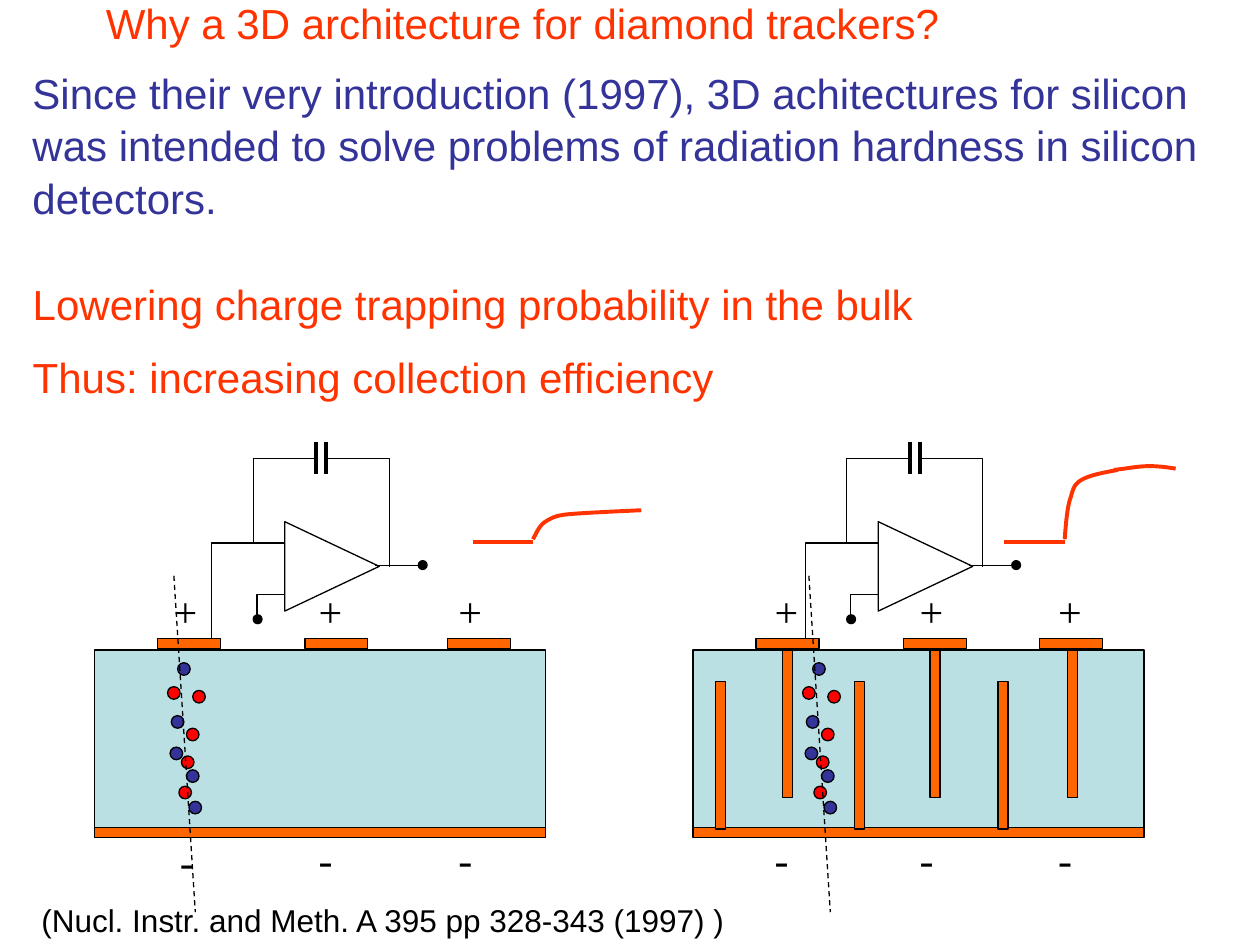
from lxml.etree import SubElement
from pptx import Presentation
from pptx.dml.color import RGBColor
from pptx.enum.dml import MSO_LINE
from pptx.enum.shapes import MSO_CONNECTOR, MSO_SHAPE
from pptx.enum.text import MSO_ANCHOR, MSO_AUTO_SIZE, PP_ALIGN
from pptx.oxml.ns import qn
from pptx.util import Cm, Pt

# Content; places are in inches: left, top, width, height
COLOR = {"red": "FF3300", "navy": "333399", "black": "000000", "white": "FFFFFF",
         "bulk": "BBE0E3", "metal": "FF6600", "hole": "FF0000"}
TITLE = "Why a 3D architecture for diamond trackers?"
INTRO = ("Since their very introduction (1997), 3D achitectures for silicon was intended "
         "to solve problems of radiation hardness in silicon detectors.")
GOALS = ["Lowering charge trapping probability in the bulk",
         "Thus: increasing collection efficiency"]
SOURCE = "(Nucl. Instr. and Meth. A 395 pp 328-343 (1997) )"

# The two sensors: planar on the left, 3D on the right
PLANAR = {"left": 0.75, "pads": [1.25, 2.42, 3.55], "plus": [1.28, 2.43, 3.54],
          "minus": [(1.33, 6.58), (2.43, 6.57), (3.54, 6.57)],
          "upper": [], "lower": [], "track": 0, "amp": 0}
DEEP = {"left": 5.5, "pads": [6, 7.17, 8.25], "plus": [6.05, 7.2, 8.3],
        "minus": [(6.05, 6.57), (7.2, 6.57), (8.3, 6.57)],
        "upper": [6.21, 7.38, 8.47], "lower": [5.68, 6.78, 7.92],
        "track": 5.04, "amp": 4.71}
CHARGES = {
    "hole": [(1.53, 5.48), (1.33, 5.45), (1.48, 5.78), (1.44, 6), (1.42, 6.24)],
    "navy": [(1.36, 5.68), (1.35, 5.93), (1.48, 6.11), (1.5, 6.36), (1.41, 5.26)],
}
WIRES = [
    [(2.26, 4.31), (1.68, 4.31), (1.68, 5.06)],
    [(2.51, 3.64), (2.01, 3.64), (2.01, 4.31)],
    [(2.26, 4.72), (2.04, 4.72), (2.04, 4.95)],
    [(2.6, 3.64), (3.09, 3.64), (3.09, 4.5)],
]
# Signals: a flat start, then Bezier curves as a start and triples of points
PULSES = [
    {"flat": (3.75, 4.23), "curves": [
        [(4.23, 4.28), (4.26, 4.23), (4.28, 4.17), (4.33, 4.14), (4.38, 4.11),
         (4.41, 4.09), (4.53, 4.08), (4.66, 4.07), (4.87, 4.06), (5.09, 4.05)]]},
    {"flat": (7.97, 8.45), "curves": [
        [(8.45, 4.28), (8.46, 4.15), (8.47, 4.02), (8.5, 3.94), (8.52, 3.86),
         (8.54, 3.83), (8.6, 3.8), (8.66, 3.77), (8.76, 3.75), (8.87, 3.73)],
        [(8.84, 3.73), (8.94, 3.72), (9.03, 3.7), (9.12, 3.7), (9.2, 3.7),
         (9.27, 3.71), (9.33, 3.72)]]},
]

deck = Presentation()
deck.slide_width, deck.slide_height = Cm(25.4), Cm(19.05)
slide = deck.slides.add_slide(deck.slide_layouts[1])
shapes = slide.shapes


def size(inch):
    return Cm(inch * 2.54)


def tint(name):
    return RGBColor.from_string(COLOR[name])


def pen(item, color="black", width=0.75):
    item.line.color.rgb = tint(color)
    item.line.width = Pt(width)


def block(kind, place, fill):
    item = shapes.add_shape(kind, *map(size, place))
    item.shadow.inherit = False
    item.fill.solid()
    item.fill.fore_color.rgb = tint(fill)
    pen(item)
    return item


def line(start, end, color="black", width=0.75):
    item = shapes.add_connector(MSO_CONNECTOR.STRAIGHT, *map(size, start + end))
    SubElement(item._element.spPr, qn("a:effectLst"))
    pen(item, color, width)
    return item


def route(points, color="black", width=0.75):
    spots = [(size(x), size(y)) for x, y in points]
    form = shapes.build_freeform(*spots[0])
    form.add_line_segments(spots[1:], close=False)
    item = form.convert_to_shape()
    item.shadow.inherit = False
    item.fill.background()
    pen(item, color, width)


def bend(points, steps=10):
    """Points along a chain of cubic Bezier curves."""
    track = [points[0]]
    for i in range(0, len(points) - 1, 3):
        for n in range(1, steps + 1):
            t = n / steps
            parts = ((1 - t) ** 3, 3 * t * (1 - t) ** 2, 3 * t * t * (1 - t), t ** 3)
            track.append(tuple(sum(w * p[axis] for w, p in zip(parts, points[i:i + 4]))
                               for axis in (0, 1)))
    return track


def write(box, place, lines, color="black", points=24, font="Arial", gap=13):
    box.left, box.top, box.width, box.height = map(size, place)
    frame = box.text_frame
    frame.text = "\n".join(lines)
    frame.word_wrap = True
    frame.auto_size = MSO_AUTO_SIZE.NONE
    frame.vertical_anchor = MSO_ANCHOR.TOP
    for i, para in enumerate(frame.paragraphs):
        if box.is_placeholder:
            props = para._p.get_or_add_pPr()
            props.set("marL", "0")
            props.set("indent", "0")
            SubElement(props, qn("a:buNone"))
        para.alignment = PP_ALIGN.LEFT
        para.space_before = Pt(gap if i else 0)
        for run in para.runs:
            run.font.name, run.font.size = font, Pt(points)
            run.font.color.rgb = tint(color)
    return frame


def label(place, text, **style):
    return write(shapes.add_textbox(0, 0, 0, 0), place, [text], **style)


def sensor(left, pads, plus, minus, upper, lower, track, amp):
    # Bulk, back contact, pads and columns
    bars = [(x, 5.07, 0.5, 0.08) for x in pads] + [(left, 6.57, 3.58, 0.08)]
    columns = [(x, 5.16, 0.08, 1.17) for x in upper] + [(x, 5.41, 0.08, 1.17) for x in lower]
    block(MSO_SHAPE.RECTANGLE, (left, 5.16, 3.58, 1.42), "bulk")
    for place in bars + columns:
        block(MSO_SHAPE.RECTANGLE, place, "metal")
    # Signs
    for x, y, sign in [(x, 4.6, "+") for x in plus] + [(x, y, "-") for x, y in minus]:
        label((x, y, 0.61, 0.5), sign, font="Times New Roman")
    # Charges along the particle track
    for fill, spots in CHARGES.items():
        for x, y in spots:
            block(MSO_SHAPE.OVAL, (x + track, y, 0.1, 0.1), fill)
    line((1.38 + track, 4.57), (1.55 + track, 7.24)).line.dash_style = MSO_LINE.DASH
    # Amplifier with its capacitor, wires and end points
    block(MSO_SHAPE.ISOSCELES_TRIANGLE, (2.28 + amp, 4.12, 0.71, 0.75), "white").rotation = 90
    for x in (2.51, 2.59):
        line((x + amp, 3.51), (x + amp, 3.76), width=2.25)
    for wire in WIRES:
        route([(x + amp, y) for x, y in wire])
    line((2.98 + amp, 4.49), (3.36 + amp, 4.49))
    for x, y in [(2.01, 4.88), (3.32, 4.45)]:
        block(MSO_SHAPE.OVAL, (x + amp, y, 0.07, 0.07), "black")


# Sensors and signals
for parts in (PLANAR, DEEP):
    sensor(**parts)
for pulse in PULSES:
    start, end = pulse["flat"]
    line((start, 4.3), (end, 4.3), "red", 2.25)
    for curve in pulse["curves"]:
        route(bend(curve), "red", 2.25)

# Texts
write(shapes.title, (0.74, -0.07, 7.4, 0.5), [TITLE], "red")
write(slide.placeholders[1], (0.16, 2.16, 9.12, 1.11), GOALS, "red")
intro = label((0.16, 0.47, 9.64, 1.31), INTRO, color="navy")
intro.paragraphs[0].line_spacing = 1.04
label((0.23, 7.1, 6.13, 0.4), SOURCE, points=18)

deck.save("out.pptx")
